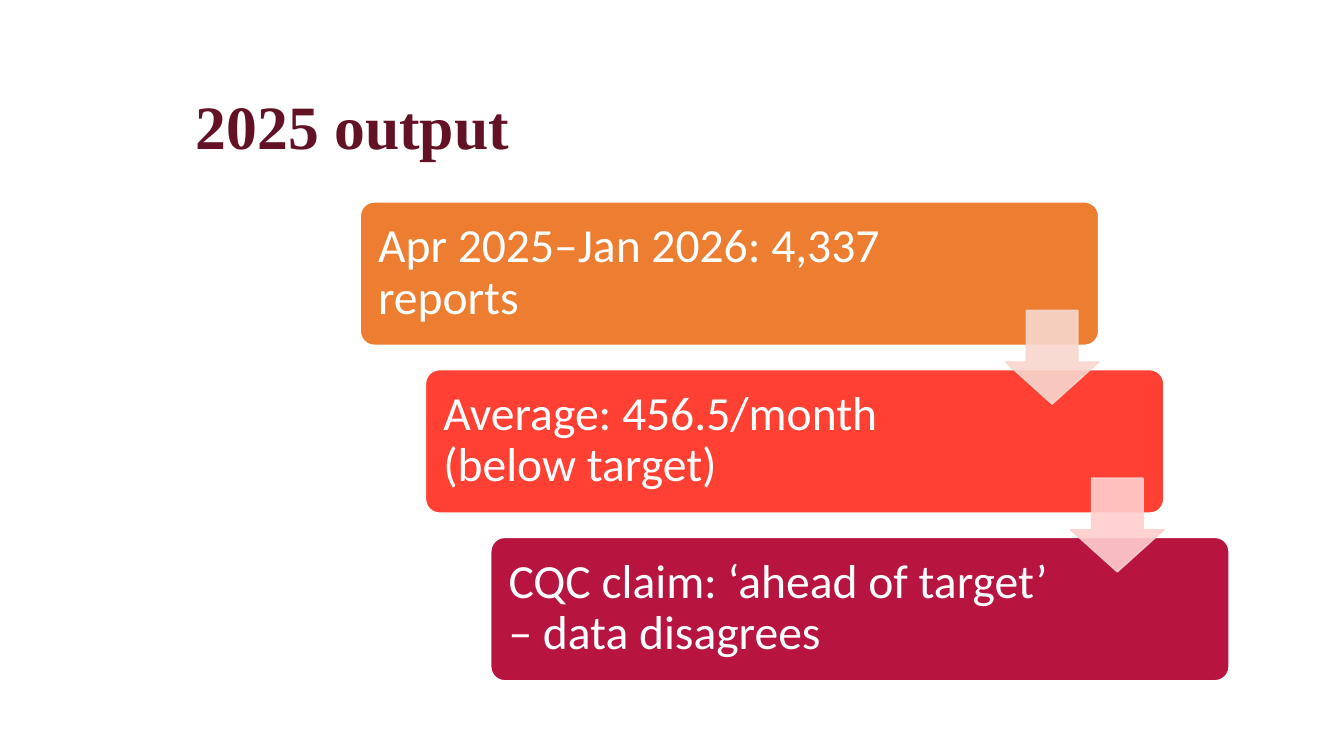
from dataclasses import dataclass

from lxml.etree import SubElement
from pptx import Presentation
from pptx.dml.color import RGBColor
from pptx.enum.shapes import MSO_SHAPE as Preset
from pptx.enum.text import MSO_ANCHOR as Anchor
from pptx.enum.text import MSO_AUTO_SIZE as AutoSize
from pptx.enum.text import PP_ALIGN as Align
from pptx.oxml.ns import qn
from pptx.util import Inches, Pt

COLORS = {
    "title": "631226",
    "white": "FFFFFF",
    "orange": "ED7D31",
    "red": "FF4033",
    "crimson": "B81440",
    "peach": "F8D7CE",
    "pink": "FFCFCE",
}
TITLE_FONT = {"name": "Times New Roman", "size": Pt(44), "bold": True}
STEP_FONT = {"name": "Calibri", "size": Pt(34), "bold": False}
TITLE_FRAME = {
    "margin_left": 0, "margin_right": 0, "margin_top": Inches(0.01), "margin_bottom": 0,
    "vertical_anchor": Anchor.MIDDLE, "word_wrap": True,
    "auto_size": AutoSize.SHAPE_TO_FIT_TEXT,
}
STEP_FRAME = {
    **dict.fromkeys(("margin_left", "margin_right", "margin_top", "margin_bottom"), Inches(0.14)),
    "vertical_anchor": Anchor.MIDDLE, "word_wrap": True, "auto_size": AutoSize.NONE,
}


@dataclass(frozen=True)
class Box:
    """A place on the grid, in cells of a tenth of an inch."""
    column: float
    row: float
    columns: float
    rows: float

    def lengths(self) -> tuple:
        cells = (self.column, self.row, self.columns, self.rows)
        return tuple(Inches(cell / 10) for cell in cells)

    def moved(self, index: int) -> "Box":
        """The same box, shifted down the staircase by index steps."""
        return Box(self.column + index * STAIR_COLUMNS, self.row + index * STAIR_ROWS,
                   self.columns, self.rows)


@dataclass(frozen=True)
class Step:
    text: str
    color: str
    arrow_color: str = ""


STAIR_COLUMNS, STAIR_ROWS = 6.47, 16.64
TITLE = Box(19.4, 9.4, 103.6, 6.8)
CARD = Box(35.7, 20, 73.3, 14.3)
LABEL = Box(36.1, 20.4, 57, 13.4)
ARROW = Box(99.7, 30.8, 9.3, 9.3)
STEPS = (
    Step("Apr 2025–Jan 2026: 4,337 reports", "orange", "peach"),
    Step("Average: 456.5/month (below target)", "red", "pink"),
    Step("CQC claim: ‘ahead of target’ – data disagrees", "crimson"),
)


def set_attributes(target, values: dict) -> None:
    for name, value in values.items():
        setattr(target, name, value)


def write_text(shape, text: str, frame_values: dict, font_values: dict, color: str) -> None:
    frame = shape.text_frame
    set_attributes(frame, frame_values)
    paragraph = frame.paragraphs[0]
    set_attributes(paragraph, {"alignment": Align.LEFT, "line_spacing": 0.9})
    run = paragraph.add_run()
    run.text = text
    set_attributes(run.font, font_values)
    run.font.color.rgb = RGBColor.from_string(COLORS[color])


def add_preset(slide, preset: Preset, box: Box, adjustments: tuple,
               fill: str, line: str, line_width: float):
    shape = slide.shapes.add_shape(preset, *box.lengths())
    shape.shadow.inherit = False
    for index, value in enumerate(adjustments):
        shape.adjustments[index] = value
    shape.fill.solid()
    shape.fill.fore_color.rgb = RGBColor.from_string(COLORS[fill])
    shape.line.color.rgb = RGBColor.from_string(COLORS[line])
    shape.line.width = Pt(line_width)
    return shape


def set_opacity(shape, percent: int) -> None:
    """Apply the opacity to both the fill and the outline."""
    for color in shape.fill._xPr.iter(qn("a:srgbClr")):
        SubElement(color, qn("a:alpha")).set("val", str(percent * 1000))


def add_step(slide, step: Step, index: int) -> None:
    add_preset(slide, Preset.ROUNDED_RECTANGLE, CARD.moved(index), (0.1,),
               step.color, "white", 1.5)
    label = slide.shapes.add_textbox(*LABEL.moved(index).lengths())
    write_text(label, step.text, STEP_FRAME, STEP_FONT, "white")


def add_arrow(slide, color: str, index: int) -> None:
    arrow = add_preset(slide, Preset.DOWN_ARROW, ARROW.moved(index), (0.55, 0.45),
                       color, color, 1)
    set_opacity(arrow, 90)


def main() -> None:
    presentation = Presentation()
    presentation.slide_width, presentation.slide_height = Inches(13.33), Inches(7.5)
    slide = presentation.slides.add_slide(presentation.slide_layouts[5])
    title = slide.shapes.title
    set_attributes(title, dict(zip(("left", "top", "width", "height"), TITLE.lengths())))
    write_text(title, "2025 output", TITLE_FRAME, TITLE_FONT, "title")
    for index, step in enumerate(STEPS):
        add_step(slide, step, index)
    for index, step in enumerate(STEPS):
        if step.arrow_color:
            add_arrow(slide, step.arrow_color, index)
    presentation.save("out.pptx")


if __name__ == "__main__":
    main()
